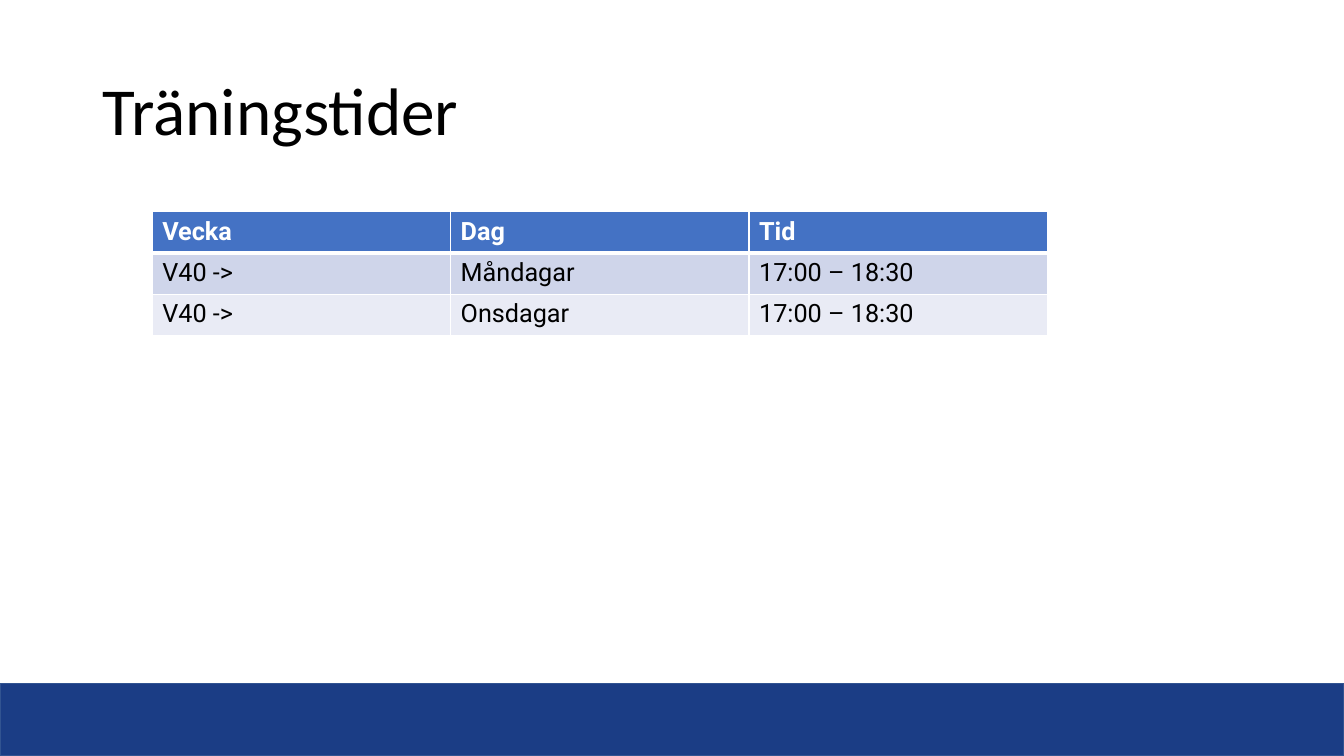
from dataclasses import dataclass

from lxml import etree
from pptx import Presentation
from pptx.dml.color import RGBColor
from pptx.enum.shapes import MSO_SHAPE
from pptx.enum.text import MSO_ANCHOR, MSO_AUTO_SIZE, PP_ALIGN
from pptx.oxml.ns import qn
from pptx.slide import Slide
from pptx.table import _Cell
from pptx.util import Inches, Pt

RECTANGLE = MSO_SHAPE.RECTANGLE
MIDDLE = MSO_ANCHOR.MIDDLE
NO_AUTOFIT = MSO_AUTO_SIZE.NONE
LEFT = PP_ALIGN.LEFT

WHITE = RGBColor(0xFF, 0xFF, 0xFF)
BLACK = RGBColor(0x00, 0x00, 0x00)
BAND_BLUE = RGBColor(0x1B, 0x3D, 0x85)
BAND_EDGE = RGBColor(0x32, 0x54, 0x91)
HEADER_BLUE = RGBColor(0x44, 0x72, 0xC4)
ROW_DARK = RGBColor(0xCF, 0xD5, 0xEA)
ROW_LIGHT = RGBColor(0xE9, 0xEB, 0xF5)

SLIDE_WIDTH, SLIDE_HEIGHT = Inches(13.33), Inches(7.5)
COLUMN_WIDTH, ROW_HEIGHT = Inches(2.96), Inches(0.41)
THIN, THICK = Pt(1), Pt(3)


@dataclass(frozen=True)
class ScheduleRow:
    texts: tuple[str, str, str]
    fill: RGBColor
    color: RGBColor = BLACK
    bold: bool = False
    top: int = THIN
    bottom: int = THIN


SCHEDULE = (
    ScheduleRow(("Vecka", "Dag", "Tid"), HEADER_BLUE, WHITE, True, bottom=THICK),
    ScheduleRow(("V40 ->", "Måndagar", "17:00 – 18:30"), ROW_DARK, top=THICK),
    ScheduleRow(("V40 ->", "Onsdagar", "17:00 – 18:30"), ROW_LIGHT),
)


def set_borders(cell: _Cell, widths: dict[str, int]) -> None:
    """Draw white cell borders, placed ahead of the cell fill as the schema asks."""
    properties = cell._tc.get_or_add_tcPr()
    for position, (side, width) in enumerate(widths.items()):
        border = etree.Element(qn(f"a:{side}"), w=str(width))
        solid = etree.SubElement(border, qn("a:solidFill"))
        etree.SubElement(solid, qn("a:srgbClr"), val=str(WHITE))
        properties.insert(position, border)


def add_band(slide: Slide) -> None:
    height = Inches(0.72)
    band = slide.shapes.add_shape(
        RECTANGLE, 0, SLIDE_HEIGHT - height, SLIDE_WIDTH, height)
    band.shadow.inherit = False
    band.fill.solid()
    band.fill.fore_color.rgb = BAND_BLUE
    band.line.color.rgb = BAND_EDGE
    band.line.width = Pt(1)


def add_title(slide: Slide, text: str) -> None:
    title = slide.shapes.title
    place = {"left": 0.92, "top": 0.4, "width": 10.93, "height": 1.45}
    for name, length in place.items():
        setattr(title, name, Inches(length))
    frame = title.text_frame
    frame.text = text
    frame.auto_size = NO_AUTOFIT
    frame.vertical_anchor = MIDDLE
    heading = frame.paragraphs[0]
    heading.alignment = LEFT
    heading.line_spacing = 0.9
    for name, value in {"name": "Calibri", "size": Pt(48)}.items():
        setattr(heading.font, name, value)
    heading.font.color.rgb = BLACK


def fill_cell(cell: _Cell, text: str, row: ScheduleRow) -> None:
    cell.text = text
    cell.fill.solid()
    cell.fill.fore_color.rgb = row.fill
    set_borders(cell, {"lnL": THIN, "lnR": THIN, "lnT": row.top, "lnB": row.bottom})
    font = cell.text_frame.paragraphs[0].runs[0].font
    for name, value in {"name": "Roboto", "size": Pt(18), "bold": row.bold}.items():
        setattr(font, name, value)
    font.color.rgb = row.color


def add_schedule(slide: Slide, rows: tuple[ScheduleRow, ...]) -> None:
    columns = len(rows[0].texts)
    schedule = slide.shapes.add_table(
        len(rows), columns, Inches(1.51), Inches(2.1),
        COLUMN_WIDTH * columns, ROW_HEIGHT * len(rows)).table
    for column in schedule.columns:
        column.width = COLUMN_WIDTH
    for row_index, row in enumerate(rows):
        schedule.rows[row_index].height = ROW_HEIGHT
        for column_index, text in enumerate(row.texts):
            fill_cell(schedule.cell(row_index, column_index), text, row)


def main() -> None:
    presentation = Presentation()
    presentation.slide_width = SLIDE_WIDTH
    presentation.slide_height = SLIDE_HEIGHT
    slide = presentation.slides.add_slide(presentation.slide_layouts[5])

    # Bottom band, heading and training times
    add_band(slide)
    add_title(slide, "Träningstider")
    add_schedule(slide, SCHEDULE)

    presentation.save("out.pptx")


if __name__ == "__main__":
    main()
